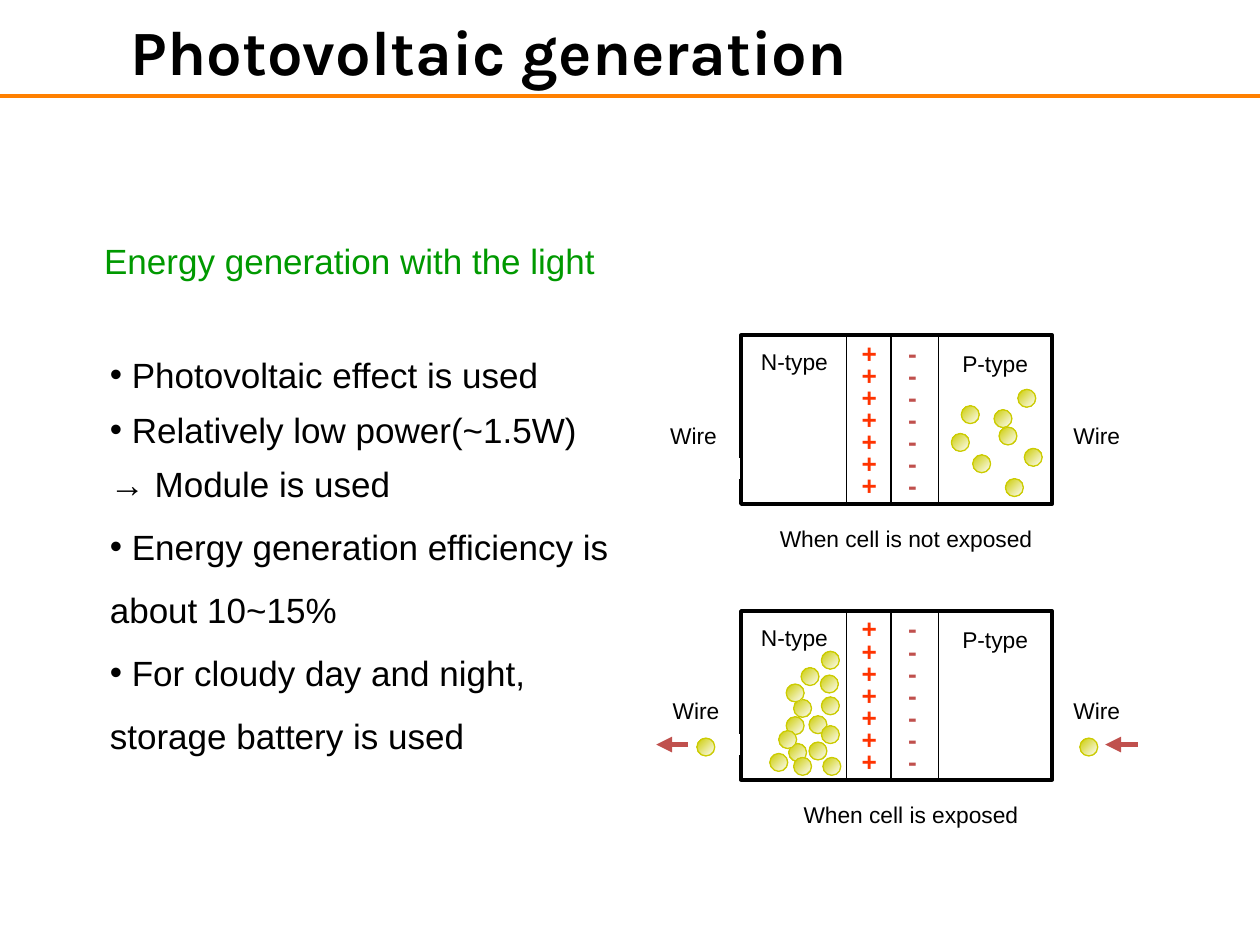
from lxml.etree import SubElement
from pptx import Presentation
from pptx.dml.color import RGBColor
from pptx.enum.shapes import MSO_CONNECTOR as CONN, MSO_SHAPE as SHAPE
from pptx.enum.text import MSO_ANCHOR as ANCHOR, MSO_AUTO_SIZE as AUTO, PP_ALIGN as ALIGN
from pptx.oxml.ns import qn
from pptx.util import Cm, Pt

BLACK = RGBColor(0x00, 0x00, 0x00)
WHITE = RGBColor(0xFF, 0xFF, 0xFF)
GREEN = RGBColor(0x00, 0x99, 0x00)
ORANGE = RGBColor(0xFF, 0x80, 0x00)
PLUS_RED = RGBColor(0xFF, 0x33, 0x00)
BRICK = RGBColor(0xC0, 0x50, 0x4D)
YELLOW = RGBColor(0xCC, 0xCC, 0x00)

BULLETS = [
    (" Photovoltaic effect is used", 1.8, True),
    (" Relatively low power(~1.5W)", 1.3, True),
    ("→ Module is used", 1.3, False),
    (" Energy generation efficiency is about 10~15%", 1.5, True),
    (" For cloudy day and night, storage battery is used", 1.5, True),
]
P_SIDE_ELECTRONS = [
    (19.38, 8.18), (20.14, 8.61), (19.61, 9.17), (20.04, 8.26),
    (20.65, 9.04), (20.27, 9.65), (19.18, 8.74), (20.52, 7.85),
]
N_SIDE_ELECTRONS = [
    (16.56, 13.13), (16.54, 13.61), (16.56, 14.05), (16.31, 14.43), (16.56, 14.63),
    (16.31, 14.96), (15.9, 14.99), (15.85, 14.45), (16.59, 15.27), (16, 15.27),
    (15.52, 15.19), (16, 14.1), (16.15, 13.46), (15.85, 13.79), (15.7, 14.73),
]
WIRE_ELECTRONS = [(14.05, 14.88), (21.77, 14.88)]


class Deck:
    font = "Arial"
    label_size = 13
    electron_size = 0.36

    def __init__(self):
        self.prs = Presentation()
        self.prs.slide_width, self.prs.slide_height = Cm(25.4), Cm(19.05)
        self.s = self.prs.slides.add_slide(self.prs.slide_layouts[1])

    def place(self, sp, x, y, w, h):
        sp.left, sp.top, sp.width, sp.height = Cm(x), Cm(y), Cm(w), Cm(h)

    def run(self, p, text, size, color=BLACK, bold=False, font=None):
        r = p.add_run()
        r.text = text
        r.font.name = font or self.font
        r.font.size = Pt(size)
        r.font.bold = bold
        r.font.color.rgb = color

    def title(self, text, box):
        sp = self.s.shapes.title
        self.place(sp, *box)
        tf = sp.text_frame
        tf.auto_size = AUTO.NONE
        tf.vertical_anchor = ANCHOR.MIDDLE
        p = tf.paragraphs[0]
        p.alignment = ALIGN.CENTER
        self.run(p, text, 36, bold=True, font="Karla")

    def bullets(self, items, box):
        sp = self.s.placeholders[1]
        self.place(sp, *box)
        tf = sp.text_frame
        tf.auto_size = AUTO.NONE
        for i, (text, spacing, bulleted) in enumerate(items):
            p = tf.add_paragraph() if i else tf.paragraphs[0]
            pPr = p._p.get_or_add_pPr()
            pPr.set("marL", "0")
            pPr.set("indent", "0")
            if bulleted:
                SubElement(pPr, qn("a:buChar")).set("char", "•")
            else:
                SubElement(pPr, qn("a:buNone"))
            p.line_spacing = spacing
            p.space_before = Pt(0)
            self.run(p, text, 20)

    def text(self, lines, box, size=label_size, color=BLACK, bold=False, spacing=1.0, wrap=False):
        sp = self.s.shapes.add_textbox(*map(Cm, box))
        tf = sp.text_frame
        tf.word_wrap = wrap
        tf.auto_size = AUTO.SHAPE_TO_FIT_TEXT
        for i, line in enumerate(lines):
            p = tf.add_paragraph() if i else tf.paragraphs[0]
            p.line_spacing = spacing
            self.run(p, line, size, color, bold)

    def line(self, x1, y1, x2, y2, color=BLACK, width=0.75, arrow=False):
        c = self.s.shapes.add_connector(CONN.STRAIGHT, Cm(x1), Cm(y1), Cm(x2), Cm(y2))
        c.line.color.rgb = color
        c.line.width = Pt(width)
        if arrow:
            SubElement(c.line._get_or_add_ln(), qn("a:tailEnd")).set("type", "triangle")
        SubElement(c._element.spPr, qn("a:effectLst"))

    def shape(self, kind, box, color, width):
        sp = self.s.shapes.add_shape(kind, *map(Cm, box))
        sp.shadow.inherit = False
        sp.fill.background()
        sp.line.color.rgb = color
        sp.line.width = Pt(width)
        return sp

    def electron(self, x, y):
        sp = self.shape(SHAPE.OVAL, (x, y, self.electron_size, self.electron_size), YELLOW, 0.75)
        sp.fill.gradient()
        sp.fill.gradient_angle = 315
        for stop, color in zip(sp.fill.gradient_stops, (YELLOW, WHITE)):
            stop.color.rgb = color

    def cell(self, top, wire_x, caption, caption_x, caption_w):
        self.shape(SHAPE.RECTANGLE, (14.94, top, 6.27, 3.4), BLACK, 2.25)
        for x, width in ((17.07, 0.75), (17.96, 0.75), (18.92, 1)):
            self.line(x, top + 0.02, x, top + 3.4, width=width)
        self.line(14.91, top + 2.69, 13.18, top + 2.69, WHITE, 12)
        self.text(["N-type"], (15.09, top + 0.12, 1.85, 0.81))
        self.text(["P-type"], (19.15, top + 0.17, 1.83, 0.81))
        for sign, x, w, color in (("+", 17.12, 0.81, PLUS_RED), ("-", 18.06, 0.69, BRICK)):
            self.text([sign] * 7, (x, top + 0.08, w, 3.38), 15, color, True, 0.7)
        for x in (wire_x, 21.39):
            self.text(["Wire"], (x, top + 1.61, 1.45, 0.81))
        self.text([caption], (caption_x, top + 3.69, caption_w, 0.81))


def main():
    deck = Deck()
    deck.line(0, 1.93, 25.4, 1.93, ORANGE, 2)
    deck.title("Photovoltaic generation", (0, 0, 19.71, 2.01))
    deck.text(["Energy generation with the light"], (1.85, 4.29, 18.67, 1.52),
              20, GREEN, spacing=1.5, wrap=True)
    deck.bullets(BULLETS, (1.96, 6.32, 10.74, 9.07))
    deck.cell(6.76, 13.26, "When cell is not exposed", 15.47, 5.61)
    deck.cell(12.32, 13.31, "When cell is exposed", 15.95, 4.85)
    for x, y in P_SIDE_ELECTRONS + N_SIDE_ELECTRONS + WIRE_ELECTRONS:
        deck.electron(x, y)
    for start, end in ((13.87, 13.23), (22.94, 22.28)):
        deck.line(start, 15.01, end, 15.01, BRICK, 3, arrow=True)
    deck.prs.save("out.pptx")


if __name__ == "__main__":
    main()
